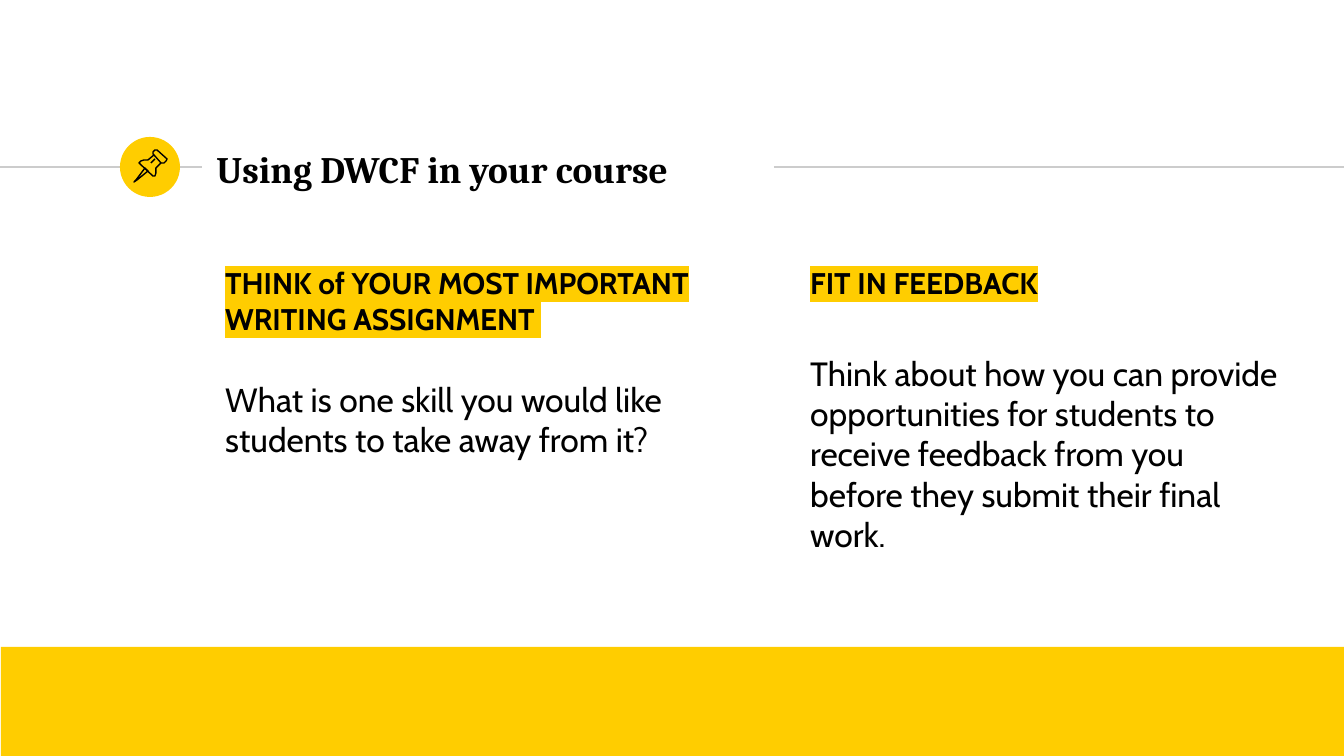
import dataclasses

import lxml.etree
import pptx
import pptx.dml.color
import pptx.enum.dml
import pptx.enum.shapes
import pptx.enum.text
import pptx.oxml.ns
import pptx.util

EMU_PER_PX = 914400 / 134.4
SLIDE_WIDTH, SLIDE_HEIGHT = 1344, 756
RULE_Y = 167

PIN_NEEDLE = [(145, 168), (136, 180), (134, 182), (137, 180), (148, 171)]
PIN_HEAD = [(154, 155), (161, 163), (164, 163), (166, 161), (167, 159),
            (157, 150), (155, 150), (153, 152), (153, 154)]
PIN_BODY = [(154, 155), (148, 160), (144, 160), (141, 161), (139, 163),
            (153, 176), (155, 176), (156, 173), (156, 168), (161, 163)]
PIN_SHINE = [(151, 163), (155, 159)]


@dataclasses.dataclass(frozen=True)
class Theme:
    accent: str = "FFCD00"
    rule: str = "CCCCCC"
    ink: str = "000000"
    title_font: str = "Cambria"
    body_font: str = "Cabin"
    title_size: int = 20
    heading_size: int = 16
    body_size: int = 18
    line_width: float = 0.75


THEME = Theme()


def px(length):
    return pptx.util.Emu(round(length * EMU_PER_PX))


def rgb(value):
    return pptx.dml.color.RGBColor.from_string(value)


def add_rule(slide, start_x, end_x):
    connector = slide.shapes.add_connector(
        pptx.enum.shapes.MSO_CONNECTOR.STRAIGHT,
        px(start_x), px(RULE_Y), px(end_x), px(RULE_Y))
    connector.line.color.rgb = rgb(THEME.rule)
    connector.line.width = pptx.util.Pt(THEME.line_width)
    lxml.etree.SubElement(connector._element.spPr, pptx.oxml.ns.qn("a:effectLst"))


def add_filled_shape(slide, kind, left, top, width, height):
    shape = slide.shapes.add_shape(kind, px(left), px(top), px(width), px(height))
    shape.shadow.inherit = False
    shape.fill.solid()
    shape.fill.fore_color.rgb = rgb(THEME.accent)
    shape.line.fill.background()


def add_outline(group, points, closed):
    start, *others = points
    builder = group.shapes.build_freeform(*start, scale=EMU_PER_PX)
    builder.add_line_segments(others, close=closed)
    shape = builder.convert_to_shape()
    shape.shadow.inherit = False
    shape.fill.background()
    shape.line.color.rgb = rgb(THEME.ink)
    shape.line.width = pptx.util.Pt(THEME.line_width)


def add_pin(slide):
    group = slide.shapes.add_group_shape()
    for points, closed in ((PIN_NEEDLE, True), (PIN_HEAD, True),
                           (PIN_BODY, False), (PIN_SHINE, False)):
        add_outline(group, points, closed)


def write_text(paragraph, text, *, font, size, bold=False, highlight=None, space_before=0):
    paragraph.alignment = pptx.enum.text.PP_ALIGN.LEFT
    paragraph.space_before = pptx.util.Pt(space_before)
    run = paragraph.add_run()
    run.text = text
    run.font.name = font
    run.font.size = pptx.util.Pt(size)
    run.font.bold = bold
    run.font.color.rgb = rgb(THEME.ink)
    if highlight:
        mark = lxml.etree.Element(pptx.oxml.ns.qn("a:highlight"))
        color = lxml.etree.SubElement(mark, pptx.oxml.ns.qn("a:srgbClr"))
        color.set("val", highlight)
        run.font._element.find(pptx.oxml.ns.qn("a:solidFill")).addnext(mark)


def format_frame(frame, anchor):
    frame.word_wrap = True
    frame.auto_size = pptx.enum.text.MSO_AUTO_SIZE.NONE
    frame.vertical_anchor = anchor
    frame.margin_left = frame.margin_right = pptx.util.Inches(0.1)
    frame.margin_top = frame.margin_bottom = pptx.util.Inches(0.1)


def set_title(slide, text):
    title = slide.shapes.title
    title.left, title.top, title.width, title.height = px(203), px(136), px(570), px(65)
    format_frame(title.text_frame, pptx.enum.text.MSO_ANCHOR.MIDDLE)
    write_text(title.text_frame.paragraphs[0], text,
               font=THEME.title_font, size=THEME.title_size, bold=True)


def add_column(slide, left, width, heading, body, gap):
    """Add a highlighted heading with body text, gap points below it."""
    box = slide.shapes.add_textbox(px(left), px(251), px(width), px(324))
    frame = box.text_frame
    format_frame(frame, pptx.enum.text.MSO_ANCHOR.TOP)
    write_text(frame.paragraphs[0], heading, font=THEME.body_font,
               size=THEME.heading_size, bold=True, highlight=THEME.accent, space_before=6)
    write_text(frame.add_paragraph(), body, font=THEME.body_font,
               size=THEME.body_size, space_before=gap)


def main():
    presentation = pptx.Presentation()
    presentation.slide_width = px(SLIDE_WIDTH)
    presentation.slide_height = px(SLIDE_HEIGHT)
    slide = presentation.slides.add_slide(presentation.slide_layouts[5])
    shapes = pptx.enum.shapes.MSO_SHAPE

    add_rule(slide, 0, 202)
    add_filled_shape(slide, shapes.OVAL, 120, 137, 60, 60)
    add_rule(slide, 774, SLIDE_WIDTH)
    add_filled_shape(slide, shapes.RECTANGLE, 1, 647, SLIDE_WIDTH, 109)
    set_title(slide, "Using DWCF in your course")
    add_pin(slide)
    add_column(slide, 212, 539, "THINK of YOUR MOST IMPORTANT WRITING ASSIGNMENT ",
               "What is one skill you would like students to take away from it?", gap=23)
    add_column(slide, 797, 495, "FIT IN FEEDBACK",
               "Think about how you can provide opportunities for students to receive "
               "feedback from you before they submit their final work.", gap=28)
    presentation.save("out.pptx")


if __name__ == "__main__":
    main()
